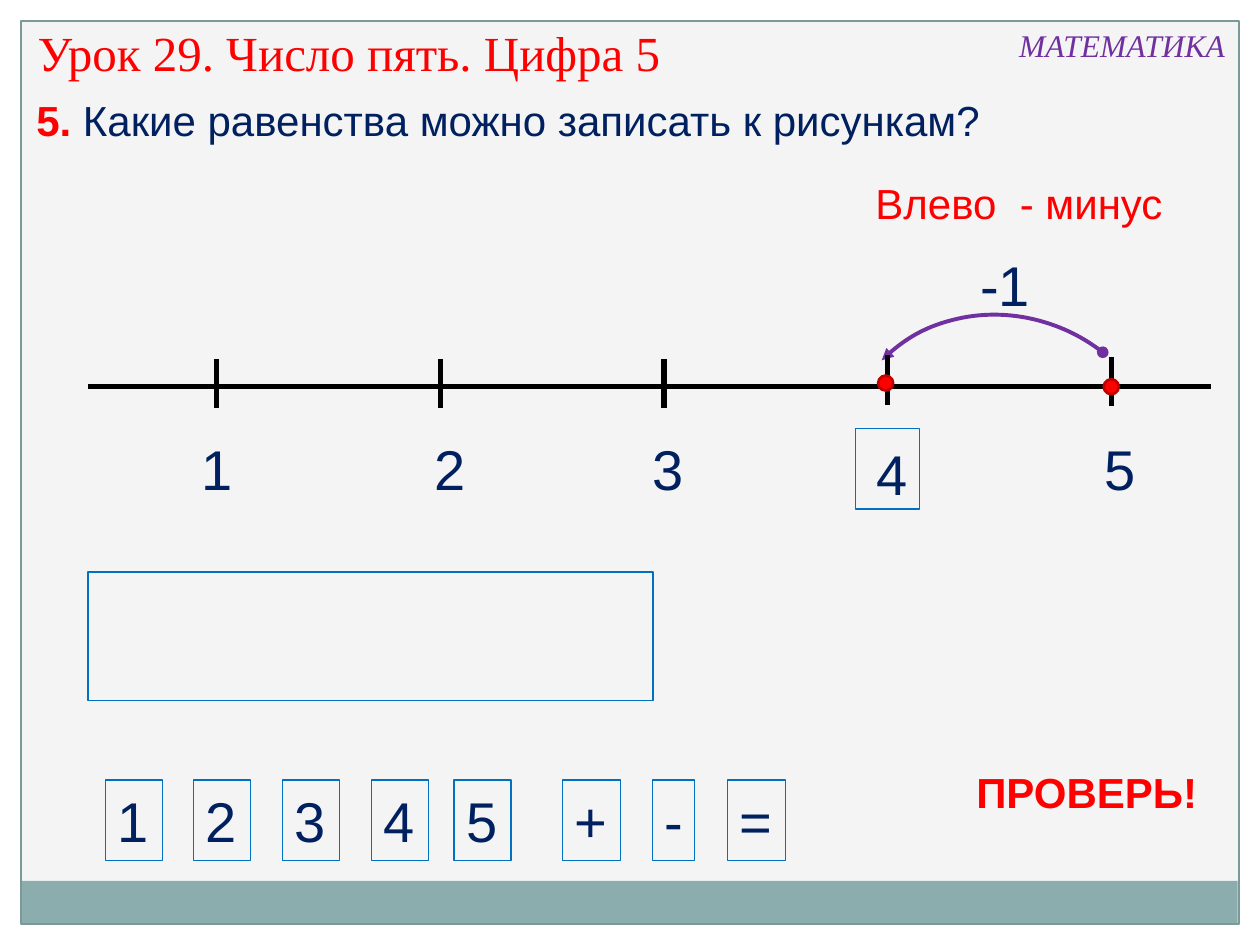
from lxml import etree
from pptx import Presentation
from pptx.dml.color import RGBColor
from pptx.enum.shapes import MSO_CONNECTOR, MSO_SHAPE
from pptx.enum.text import MSO_AUTO_SIZE, PP_ALIGN
from pptx.oxml.ns import qn
from pptx.util import Pt

RECT = MSO_SHAPE.RECTANGLE
ARC = MSO_SHAPE.ARC
DOT = MSO_SHAPE.FLOWCHART_CONNECTOR
STRAIGHT = MSO_CONNECTOR.STRAIGHT
GROW = MSO_AUTO_SIZE.SHAPE_TO_FIT_TEXT
LEFT = PP_ALIGN.LEFT

WIDTH, HEIGHT, MARGIN = 720, 540, 12
COLORS = {
    "background": "F4F4F4", "margin": "FFFFFF", "band": "8CADAE",
    "frame": "7C999A", "axis": "000000", "navy": "002060",
    "red": "FF0000", "dark red": "C00000", "purple": "7030A0",
    "blue": "0070C0",
}
DIGIT = {"size": Pt(32), "name": "Arial"}
PHRASE = {"size": Pt(24), "name": "Arial", "bold": False}
STRONG = {**PHRASE, "bold": True}
TITLE = {"size": Pt(28), "name": "Times New Roman"}
SUBJECT = {"size": Pt(18), "name": "Times New Roman", "italic": True}

TICK_LEFT, TICK_STEP, TICK_LENGTH = 123.8, 127.8, 28.2
TICK_TOPS = [205.2, 205.2, 205.2, 203, 203.8]
# Number, left, top, width
NUMBERS = [("1", 108, 244.8, 28), ("2", 241.2, 244.8, 28),
           ("3", 365.8, 244.8, 28), ("4", 493.9, 247.7, 28),
           ("5", 624.2, 244.8, 41)]
# Symbol, left, width
CARDS = [("1", 60.2, 32.6), ("2", 110.6, 32.6), ("3", 161.4, 32.6),
         ("4", 212.2, 32.6), ("5", 259.4, 32.6), ("+", 321.4, 33.4),
         ("-", 372.8, 24.2), ("=", 415.6, 33.4)]


def rgb(color):
    return RGBColor.from_string(COLORS[color])


def set_outline(item, color, weight):
    item.line.color.rgb = rgb(color)
    item.line.width = Pt(weight)


def add_figure(slide, preset, box, fill=None, outline=None):
    """Add a preset shape; outline is a pair of colour and weight."""
    figure = slide.shapes.add_shape(preset, *map(Pt, box))
    figure.shadow.inherit = False
    if fill:
        figure.fill.solid()
        figure.fill.fore_color.rgb = rgb(fill)
    else:
        figure.fill.background()
    if outline:
        set_outline(figure, *outline)
    else:
        figure.line.fill.background()
    return figure


def add_label(slide, box, *runs, wrap=True):
    """Add a text box; each run is text, font format and colour."""
    label = slide.shapes.add_textbox(*map(Pt, box))
    frame = label.text_frame
    frame.word_wrap = wrap
    frame.auto_size = GROW
    paragraph = frame.paragraphs[0]
    paragraph.alignment = LEFT
    for text, font_format, color in runs:
        run = paragraph.add_run()
        run.text = text
        run.font.color.rgb = rgb(color)
        for attribute, value in font_format.items():
            setattr(run.font, attribute, value)
    return label


def add_line(slide, *ends):
    line = slide.shapes.add_connector(STRAIGHT, *map(Pt, ends))
    set_outline(line, "axis", 3)
    etree.SubElement(line._element.spPr, qn("a:effectLst"))


def add_jump(slide):
    """Add the arc that leads from 5 back to 4."""
    jump = add_figure(slide, ARC, (474.5, 182.9, 199.4, 187.2),
                      outline=("purple", 2.25))
    jump.adjustments[0] = 167.08
    jump.adjustments[1] = 0
    jump.rotation = 45.1
    jump._element.spPr.find(qn("a:xfrm")).set("flipH", "1")
    stroke = jump._element.spPr.find(qn("a:ln"))
    for end, kind in (("a:headEnd", "oval"), ("a:tailEnd", "triangle")):
        etree.SubElement(stroke, qn(end), type=kind)


def add_backdrop(slide):
    slide.background.fill.solid()
    slide.background.fill.fore_color.rgb = rgb("background")
    for box in ((0, HEIGHT - MARGIN, WIDTH, MARGIN), (0, 0, WIDTH, MARGIN),
                (WIDTH - MARGIN, 0, MARGIN, HEIGHT), (0, 0, MARGIN, HEIGHT)):
        add_figure(slide, RECT, box, "margin")
    add_figure(slide, RECT, (11.7, 503.3, 695.6, 24.4), "band")
    add_figure(slide, RECT, (MARGIN, MARGIN, WIDTH - 2 * MARGIN,
                             HEIGHT - 2 * MARGIN), outline=("frame", 0.75))


def add_headings(slide):
    add_label(slide, (14.4, 9.4, 436.3, 41),
              ("Урок 29. Число пять. Цифра 5", TITLE, "red"))
    add_label(slide, (575.3, 11.5, 133.2, 28.8),
              ("МАТЕМАТИКА", SUBJECT, "purple"), wrap=False)
    add_label(slide, (13.7, 50.4, 686.9, 36), ("5.", STRONG, "red"),
              (" Какие равенства можно записать к рисункам?", PHRASE, "navy"))
    add_label(slide, (493.2, 97.9, 206.6, 36),
              ("Влево  - минус", PHRASE, "red"))


def add_number_line(slide):
    add_line(slide, 50.4, 221, 691.9, 221)
    add_jump(slide)
    add_label(slide, (553, 139.7, 67.7, 46), ("-1", DIGIT, "navy"))
    for index, top in enumerate(TICK_TOPS):
        x = TICK_LEFT + index * TICK_STEP
        add_line(slide, x, top, x, top + TICK_LENGTH)
    for left, top in ((501.8, 214.6), (630.7, 216.7)):
        add_figure(slide, DOT, (left, top, 8.6, 8.6), "red",
                   ("dark red", 1.5))
    add_figure(slide, RECT, (488.9, 244.8, 36.7, 46),
               outline=("blue", 0.75))
    for number, left, top, width in NUMBERS:
        add_label(slide, (left, top, width, 46), (number, DIGIT, "navy"))


def add_answer_area(slide):
    add_figure(slide, RECT, (50.4, 326.9, 322.6, 73.4),
               outline=("blue", 0.9))
    for symbol, left, width in CARDS:
        card = add_label(slide, (left, 445.7, width, 46),
                         (symbol, DIGIT, "navy"), wrap=symbol == "-")
        set_outline(card, "blue", 0.75)
    add_label(slide, (550.8, 434.2, 144, 36), ("ПРОВЕРЬ!", STRONG, "red"))


def main():
    presentation = Presentation()
    presentation.slide_width = Pt(WIDTH)
    presentation.slide_height = Pt(HEIGHT)
    slide = presentation.slides.add_slide(presentation.slide_layouts[6])
    add_backdrop(slide)
    add_headings(slide)
    add_number_line(slide)
    add_answer_area(slide)
    presentation.save("out.pptx")


if __name__ == "__main__":
    main()
